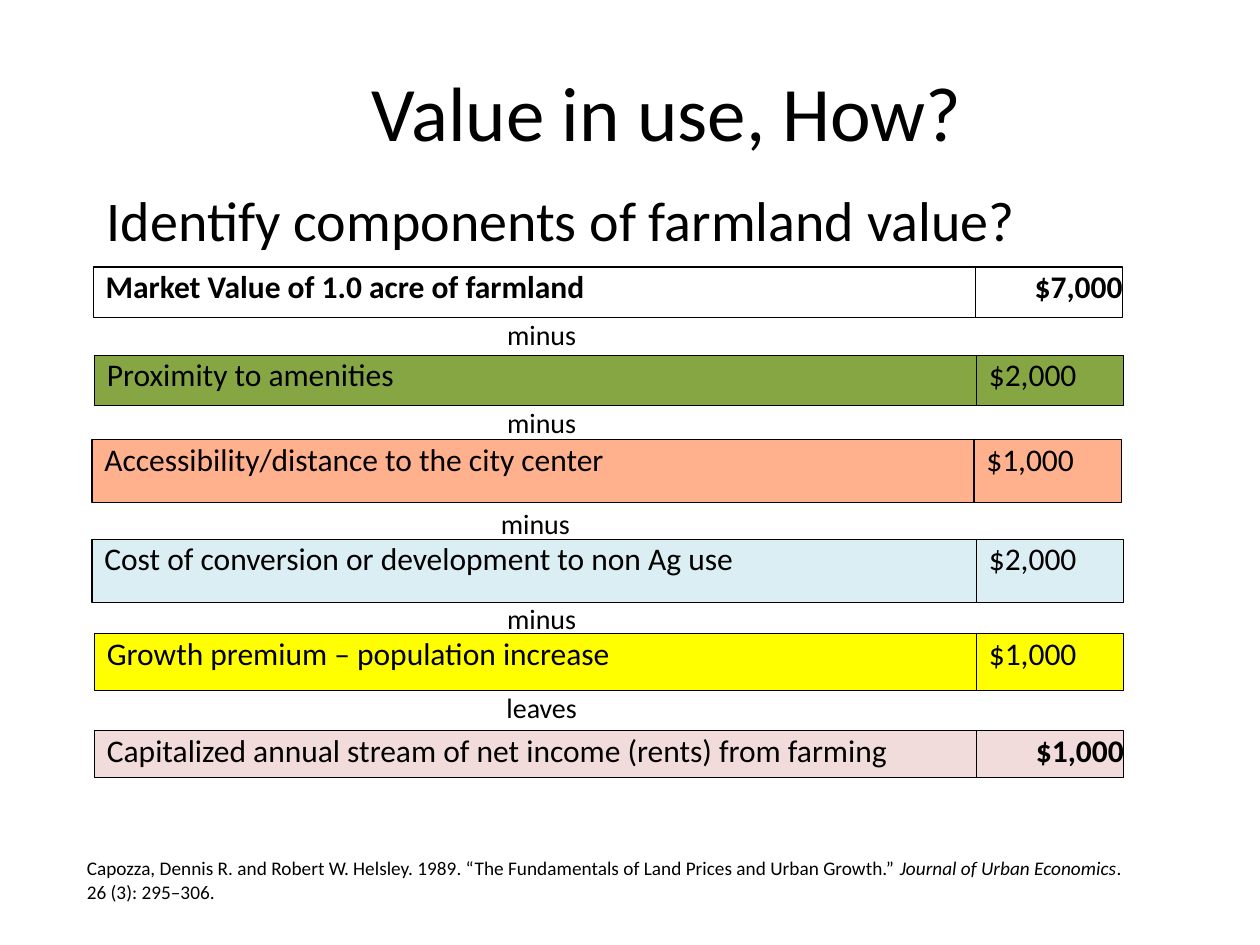
from dataclasses import dataclass
from typing import Optional

from pptx import Presentation
from pptx.dml.color import RGBColor
from pptx.enum.shapes import MSO_SHAPE
from pptx.enum.text import MSO_ANCHOR, PP_ALIGN
from pptx.util import Inches, Pt

LEFT, CENTER, RIGHT = PP_ALIGN.LEFT, PP_ALIGN.CENTER, PP_ALIGN.RIGHT
TOP, MIDDLE = MSO_ANCHOR.TOP, MSO_ANCHOR.MIDDLE
RECTANGLE = MSO_SHAPE.RECTANGLE

BLACK = RGBColor(0x00, 0x00, 0x00)
GREEN = RGBColor(0x86, 0xA6, 0x44)
ORANGE = RGBColor(0xFF, 0xB0, 0x8D)
PALE_BLUE = RGBColor(0xDB, 0xEE, 0xF4)
YELLOW = RGBColor(0xFF, 0xFF, 0x00)
PINK = RGBColor(0xF2, 0xDC, 0xDB)

FONT = "Calibri"
LABEL_WIDTH = 7
AMOUNT_WIDTH = 1.17
TEXT_INDENT = 0.1


@dataclass(frozen=True)
class ValueRow:
    label: str
    amount: str
    top: float
    height: float
    fill: Optional[RGBColor]
    left: float = 0.75
    amount_left: float = 7.75
    label_width: float = LABEL_WIDTH
    bold_label: bool = False
    is_total: bool = False


@dataclass(frozen=True)
class Operator:
    word: str
    top: float
    left: float = 0.75
    height: float = 0.35


ROWS = [
    ValueRow("Market Value of 1.0 acre of farmland", "$7,000", 2.12, 0.4, None,
             left=0.74, amount_left=7.74, bold_label=True, is_total=True),
    ValueRow("Proximity to amenities", "$2,000", 2.82, 0.4, GREEN),
    ValueRow("Accessibility/distance to the city center", "$1,000", 3.49, 0.5, ORANGE,
             left=0.73, amount_left=7.73),
    ValueRow("Cost of conversion or development to non Ag use", "$2,000", 4.28, 0.5,
             PALE_BLUE, left=0.73, label_width=7.02),
    ValueRow("Growth premium – population increase", "$1,000", 5.03, 0.45, YELLOW,
             label_width=7.08),
    ValueRow("Capitalized annual stream of net income (rents) from farming", "$1,000",
             5.8, 0.37, PINK, label_width=7.08, is_total=True),
]

OPERATORS = [
    Operator("minus", 2.52),
    Operator("minus", 3.22),
    Operator("minus", 4.02, left=0.7),
    Operator("minus", 4.77),
    Operator("leaves", 5.48, height=0.31),
]


def add_run(paragraph, text: str, *, size: float, bold: bool = False,
            italic: bool = False) -> None:
    run = paragraph.add_run()
    run.text = text
    run.font.name = FONT
    run.font.size = Pt(size)
    run.font.bold = bold
    run.font.italic = italic
    run.font.color.rgb = BLACK


def write(shape, text: str, *, size: float, bold: bool = False, align=LEFT,
          anchor=TOP, indent: Optional[float] = None):
    """Fill a shape with one paragraph; an indent replaces its default margins."""
    frame = shape.text_frame
    frame.word_wrap = True
    frame.vertical_anchor = anchor
    if indent is not None:
        frame.margin_left = Inches(indent)
        frame.margin_top = frame.margin_right = frame.margin_bottom = 0
    paragraph = frame.paragraphs[0]
    paragraph.alignment = align
    add_run(paragraph, text, size=size, bold=bold)
    return paragraph


def add_text_box(slide, left: float, top: float, width: float, height: float):
    return slide.shapes.add_textbox(Inches(left), Inches(top), Inches(width), Inches(height))


def add_cell(slide, left: float, width: float, row: ValueRow):
    cell = slide.shapes.add_shape(RECTANGLE, Inches(left), Inches(row.top),
                                  Inches(width), Inches(row.height))
    cell.shadow.inherit = False
    if row.fill is None:
        cell.fill.background()
    else:
        cell.fill.solid()
        cell.fill.fore_color.rgb = row.fill
    cell.line.color.rgb = BLACK
    cell.line.width = Pt(0.75)
    return cell


def add_value_row(slide, row: ValueRow) -> None:
    label = add_cell(slide, row.left, row.label_width, row)
    write(label, row.label, size=18, bold=row.bold_label, indent=TEXT_INDENT)
    amount = add_cell(slide, row.amount_left, AMOUNT_WIDTH, row)
    write(amount, row.amount, size=18, bold=row.is_total,
          align=RIGHT if row.is_total else LEFT, indent=TEXT_INDENT)


def add_operator(slide, operator: Operator) -> None:
    box = add_text_box(slide, operator.left, operator.top, LABEL_WIDTH, operator.height)
    write(box, operator.word, size=16, align=CENTER, indent=TEXT_INDENT)


def main() -> None:
    presentation = Presentation()
    presentation.slide_width = Inches(10)
    presentation.slide_height = Inches(7.5)
    slide = presentation.slides.add_slide(presentation.slide_layouts.get_by_name("Title Only"))

    title = slide.shapes.title
    title.left, title.top = Inches(2.17), Inches(0.25)
    title.width, title.height = Inches(6.25), Inches(1.25)
    write(title, "Value in use, How?", size=44, align=CENTER, anchor=MIDDLE)

    question = add_text_box(slide, 0.75, 1.42, 8.5, 5)
    write(question, "Identify components of farmland value?", size=32)

    for row in ROWS:
        add_value_row(slide, row)
    for operator in OPERATORS:
        add_operator(slide, operator)

    citation = add_text_box(slide, 0.59, 6.75, 8.42, 0.47)
    reference = write(
        citation,
        "Capozza, Dennis R. and Robert W. Helsley. 1989. "
        "“The Fundamentals of Land Prices and Urban Growth.” ",
        size=11,
    )
    add_run(reference, "Journal of Urban Economics", size=11, italic=True)
    add_run(reference, ". 26 (3): 295–306.", size=11)

    presentation.save("out.pptx")


if __name__ == "__main__":
    main()
